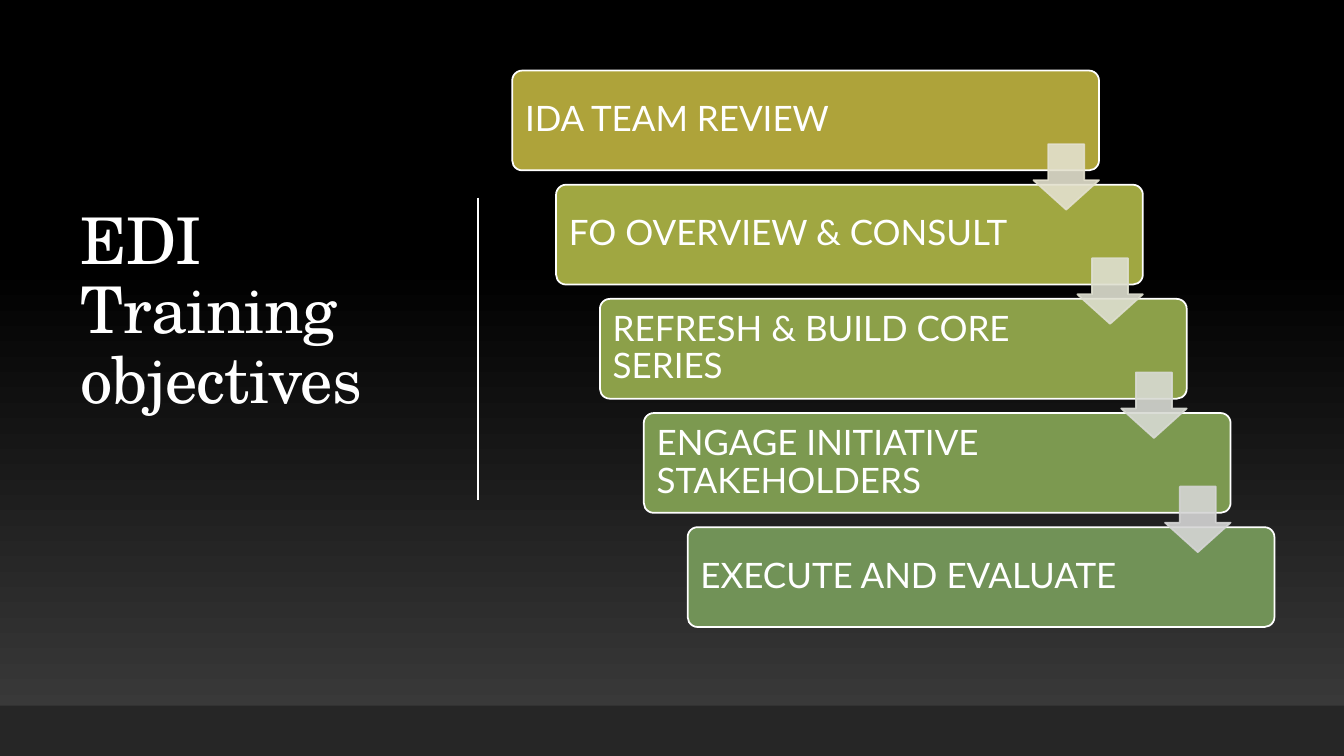
"""Build the EDI training objectives slide: a title beside a staircase of five steps."""
from lxml import etree
from pptx import Presentation, util as u
from pptx.dml.color import RGBColor
from pptx.enum import shapes, text
from pptx.oxml import ns

WHITE = RGBColor(0xFF, 0xFF, 0xFF)
BLACK = RGBColor(0x00, 0x00, 0x00)
CHARCOAL = RGBColor(0x3F, 0x3F, 0x3F)
FOOTER_GREY = RGBColor(0x26, 0x26, 0x26)

WIDTH, HEIGHT = 13.33, 7.5
STEPS = [
    ("IDA TEAM REVIEW", RGBColor(0xAE, 0xA3, 0x3A)),
    ("FO OVERVIEW & CONSULT", RGBColor(0xA0, 0xA7, 0x41)),
    ("REFRESH & BUILD CORE SERIES", RGBColor(0x8C, 0xA0, 0x49)),
    ("ENGAGE INITIATIVE STAKEHOLDERS", RGBColor(0x7C, 0x99, 0x50)),
    ("EXECUTE AND EVALUATE", RGBColor(0x71, 0x92, 0x57)),
]
ARROW_TINTS = [
    RGBColor(0xE3, 0xE0, 0xCE),
    RGBColor(0xDE, 0xDF, 0xD0),
    RGBColor(0xD8, 0xDA, 0xD3),
    RGBColor(0xD5, 0xD5, 0xD5),
]
STAIR_LEFT, STAIR_TOP = 5.08, 0.7
COLUMN, ROW = 1.74 / 4, 4.53 / 4
STEP_WIDTH, STEP_HEIGHT = 5.82, 0.99
ARROW_SIZE = 0.65


def stair(index):
    """Return the left and top of a step on the staircase grid."""
    return STAIR_LEFT + index * COLUMN, STAIR_TOP + index * ROW


def add_block(slide, kind, box, fill, outline=None, adjustments=()):
    """Add a flat preset shape, with an outline if a colour is given."""
    block = slide.shapes.add_shape(kind, *map(u.Inches, box))
    block.shadow.inherit = False
    block.fill.solid()
    block.fill.fore_color.rgb = fill
    if outline is None:
        block.line.fill.background()
    else:
        block.line.color.rgb = outline
        block.line.width = u.Pt(1.25)
    for position, value in enumerate(adjustments):
        block.adjustments[position] = value
    return block


def write(frame, words, font_name, size):
    """Write white, left-aligned, vertically centred words in a text frame."""
    frame.word_wrap = True
    frame.vertical_anchor = text.MSO_ANCHOR.MIDDLE
    paragraph = frame.paragraphs[0]
    paragraph.text = words
    paragraph.alignment = text.PP_ALIGN.LEFT
    paragraph.line_spacing = 0.9
    paragraph.font.name = font_name
    paragraph.font.size = u.Pt(size)
    paragraph.font.color.rgb = WHITE
    return paragraph


def paint_background(slide):
    """Fade the background from charcoal at the bottom to black."""
    fill = slide.background.fill
    fill.gradient()
    fill.gradient_angle = 90
    for stop, position, colour in zip(fill.gradient_stops, (0, 0.65), (CHARCOAL, BLACK)):
        stop.position = position
        stop.color.rgb = colour


def add_title(slide, words):
    """Add the title left of the divider."""
    title = slide.shapes.add_textbox(*map(u.Inches, (0.7, 0.69, 3.69, 4.83)))
    paragraph = write(title.text_frame, words, "TeX Gyre Schola", 46)
    for run in paragraph.runs:
        run.font._element.set("spc", "-50")


def add_divider(slide):
    """Add the vertical rule between title and staircase."""
    ends = map(u.Inches, (4.74, 1.96, 4.74, 4.96))
    divider = slide.shapes.add_connector(shapes.MSO_CONNECTOR.STRAIGHT, *ends)
    divider.line.color.rgb = WHITE
    divider.line.width = u.Pt(1)
    etree.SubElement(divider._element.spPr, ns.qn("a:effectLst"))


def add_step(slide, index, words, colour):
    """Add one step, leaving room for the arrow at its right."""
    box = (*stair(index), STEP_WIDTH, STEP_HEIGHT)
    step = add_block(slide, shapes.MSO_SHAPE.ROUNDED_RECTANGLE, box, colour, WHITE, [0.1])
    frame = step.text_frame
    frame.margin_left = frame.margin_top = frame.margin_bottom = u.Inches(0.1)
    frame.margin_right = u.Inches(1.18)
    write(frame, words, "Lato", 25)


def add_arrow(slide, index, tint):
    """Add the translucent arrow from one step down to the next."""
    left, top = stair(index)
    box = (left + STEP_WIDTH - ARROW_SIZE, top + 0.73, ARROW_SIZE, ARROW_SIZE)
    arrow = add_block(slide, shapes.MSO_SHAPE.DOWN_ARROW, box, tint, tint)
    arrow.adjustments[0] = 0.45
    arrow.adjustments[1] = 0.45
    arrow.adjustments[0] = 0.55
    for colour in arrow._element.spPr.iter(ns.qn("a:srgbClr")):
        etree.SubElement(colour, ns.qn("a:alpha"), val="90000")


def main():
    """Build and save the slide."""
    deck = Presentation()
    deck.slide_width, deck.slide_height = u.Inches(WIDTH), u.Inches(HEIGHT)
    slide = deck.slides.add_slide(deck.slide_layouts[6])
    paint_background(slide)
    add_title(slide, "EDI Training\vobjectives")
    add_divider(slide)
    footer = (0, HEIGHT * 14 / 15, WIDTH, HEIGHT / 15)
    add_block(slide, shapes.MSO_SHAPE.RECTANGLE, footer, FOOTER_GREY)
    for index, (words, colour) in enumerate(STEPS):
        add_step(slide, index, words, colour)
    for index, tint in enumerate(ARROW_TINTS):
        add_arrow(slide, index, tint)
    deck.save("out.pptx")


if __name__ == "__main__":
    main()
